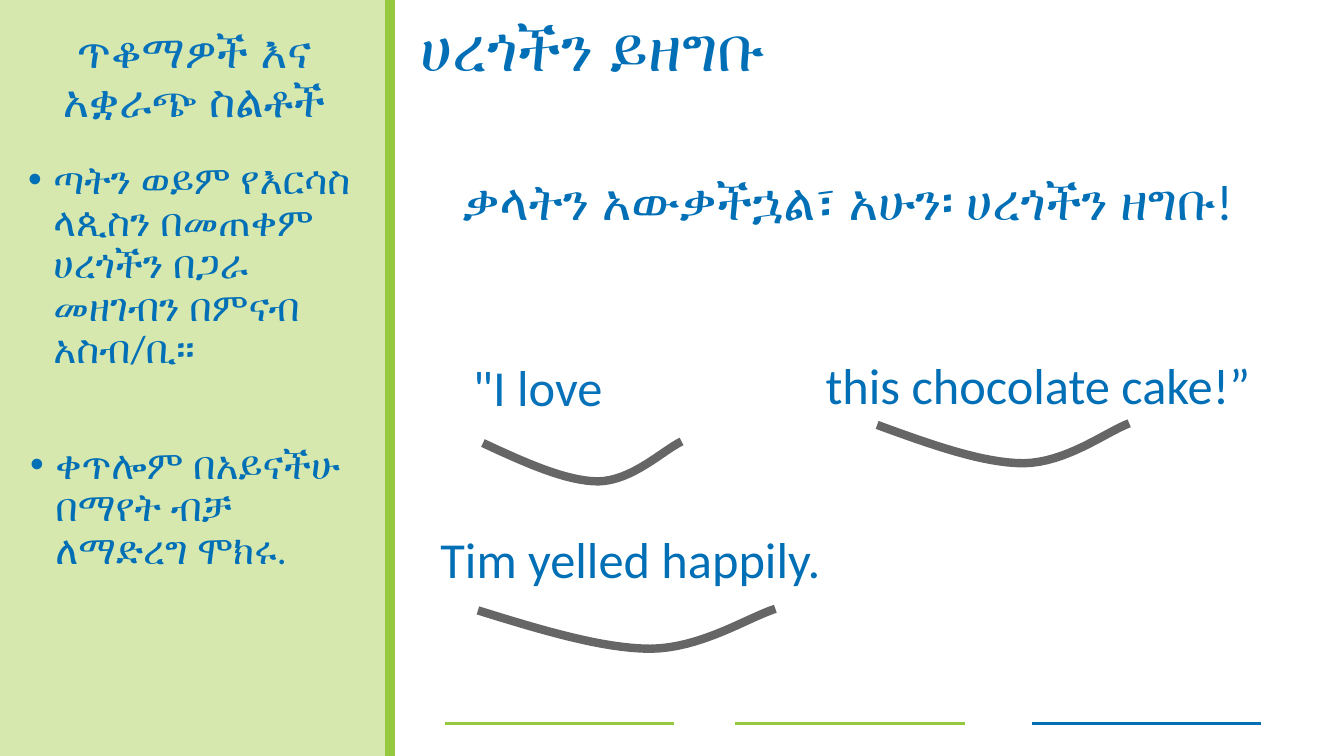
from dataclasses import dataclass

from pptx import Presentation
from pptx.dml.color import RGBColor
from pptx.enum.shapes import MSO_CONNECTOR, MSO_SHAPE
from pptx.enum.text import MSO_ANCHOR, MSO_AUTO_SIZE, PP_ALIGN
from pptx.oxml.ns import qn
from pptx.util import Emu, Pt
from lxml import etree

PX = 9144  # EMU per px, 100 px to the inch
COMPARISON_LAYOUT = 4
FONT = "Calibri"
LEFT, CENTER = PP_ALIGN.LEFT, PP_ALIGN.CENTER
TOP = MSO_ANCHOR.TOP
NO_AUTOFIT = MSO_AUTO_SIZE.NONE
STRAIGHT = MSO_CONNECTOR.STRAIGHT
RECTANGLE = MSO_SHAPE.RECTANGLE

BLUE = RGBColor(0x00, 0x6F, 0xB6)
BRIGHT_BLUE = RGBColor(0x07, 0x71, 0xBA)
GREEN = RGBColor(0x96, 0xC9, 0x3F)
PALE_GREEN = RGBColor(0xD7, 0xE8, 0xAF)
GRAY = RGBColor(0x66, 0x66, 0x66)

# Scoop outline as fractions of its box: two joined cubic curves
SCOOP_CURVES = (
    ((0, 0.04), (0.21, 0.52), (0.42, 0.99), (0.58, 0.99)),
    ((0.58, 0.99), (0.75, 0.98), (0.91, 0.21), (1, 0)),
)
SCOOP_HEIGHT = 40
CURVE_STEPS = 16


@dataclass(frozen=True)
class TextBlock:
    text: str
    left: int
    top: int
    width: int
    height: int
    size: int = 36
    color: RGBColor = BLUE
    bold: bool = False
    align: PP_ALIGN = LEFT
    bullet: bool = False
    inset_left: int = 10
    inset_top: int = 5
    placeholder: int | None = None


@dataclass(frozen=True)
class Rule:
    start: tuple[int, int]
    end: tuple[int, int]
    color: RGBColor
    weight: int = 2


@dataclass(frozen=True)
class Scoop:
    left: int
    top: int
    width: int


TEXT_BLOCKS = (
    TextBlock("ሀረጎችን ይዘግቡ", 387, 0, 622, 172, size=44, bold=True,
              inset_left=30, inset_top=18, placeholder=0),
    TextBlock("ጥቆማዎች እና አቋራጭ ስልቶች", 18, 25, 349, 95, size=32,
              color=BRIGHT_BLUE, bold=True, align=CENTER, placeholder=1),
    TextBlock("ጣትን ወይም የእርሳስ ላጲስን በመጠቀም ሀረጎችን በጋራ መዘገብን በምናብ አስብ/ቢ።",
              18, 154, 347, 247, size=28, bullet=True, placeholder=2),
    TextBlock("ቀጥሎም በአይናችሁ በማየት ብቻ ለማድረግ ሞክሩ.",
              20, 437, 347, 247, size=28, bullet=True, placeholder=4),
    TextBlock("ቃላትን አውቃችኋል፣ አሁን፡ ሀረጎችን ዘግቡ!", 449, 171, 825, 98, placeholder=3),
    TextBlock("\"I love", 434, 355, 375, 98, color=BRIGHT_BLUE, inset_left=35),
    TextBlock("this chocolate cake!”", 809, 353, 513, 98),
    TextBlock("Tim yelled happily.", 427, 526, 503, 98),
)
RULES = (
    Rule((387, 0), (387, 750), GREEN, 7),
    Rule((441, 718), (668, 718), GREEN),
    Rule((729, 718), (957, 718), GREEN),
    Rule((1024, 718), (1251, 718), BLUE),
)
SCOOPS = (Scoop(479, 438, 197), Scoop(870, 420, 250), Scoop(474, 604, 295))


def px(length: float) -> Emu:
    return Emu(round(length * PX))


def apply_format(target, values: dict) -> None:
    for name, value in values.items():
        setattr(target, name, value)


def add_bullet(paragraph, color: RGBColor) -> None:
    properties = paragraph._p.get_or_add_pPr()
    apply_indent = {"marL": px(25), "indent": px(-25)}
    for name, value in apply_indent.items():
        properties.set(name, str(value))
    bullet_color = etree.SubElement(properties, qn("a:buClr"))
    etree.SubElement(bullet_color, qn("a:srgbClr"), val=str(color))
    etree.SubElement(properties, qn("a:buChar"), char="•")


def add_text(slide, block: TextBlock) -> None:
    box = tuple(px(n) for n in (block.left, block.top, block.width, block.height))
    if block.placeholder is None:
        shape = slide.shapes.add_textbox(*box)
    else:
        shape = next(item for item in slide.placeholders
                     if item.placeholder_format.idx == block.placeholder)
        apply_format(shape, dict(zip(("left", "top", "width", "height"), box)))
    frame = shape.text_frame
    apply_format(frame, {
        "word_wrap": True, "auto_size": NO_AUTOFIT, "vertical_anchor": TOP,
        "margin_left": px(block.inset_left), "margin_top": px(block.inset_top),
        "margin_right": px(10), "margin_bottom": px(5),
    })
    paragraph = frame.paragraphs[0]
    apply_format(paragraph, {"alignment": block.align, "line_spacing": 0.9,
                             "space_before": Pt(0)})
    if block.bullet:
        add_bullet(paragraph, block.color)
    run = paragraph.add_run()
    run.text = block.text
    apply_format(run.font, {"name": FONT, "size": Pt(block.size), "bold": block.bold})
    run.font.color.rgb = block.color


def add_rule(slide, rule: Rule) -> None:
    ends = (px(n) for n in rule.start + rule.end)
    connector = slide.shapes.add_connector(STRAIGHT, *ends)
    connector.line.color.rgb = rule.color
    connector.line.width = Pt(rule.weight)
    etree.SubElement(connector._element.spPr, qn("a:effectLst"))


def curve_point(controls: tuple, t: float) -> tuple[float, float]:
    weights = ((1 - t) ** 3, 3 * t * (1 - t) ** 2, 3 * t * t * (1 - t), t ** 3)
    x, y = (sum(w * point[axis] for w, point in zip(weights, controls))
            for axis in (0, 1))
    return x, y


def add_scoop(slide, scoop: Scoop) -> None:
    fractions = [SCOOP_CURVES[0][0]] + [
        curve_point(controls, step / CURVE_STEPS)
        for controls in SCOOP_CURVES for step in range(1, CURVE_STEPS + 1)
    ]
    points = [(px(scoop.left + x * scoop.width), px(scoop.top + y * SCOOP_HEIGHT))
              for x, y in fractions]
    builder = slide.shapes.build_freeform(*points[0])
    builder.add_line_segments(points[1:], close=False)
    shape = builder.convert_to_shape()
    shape.shadow.inherit = False
    shape.fill.background()
    shape.line.color.rgb = GRAY
    shape.line.width = Pt(6)


def add_sidebar(slide) -> None:
    sidebar = slide.shapes.add_shape(RECTANGLE, 0, 0, px(387), px(750))
    sidebar.shadow.inherit = False
    sidebar.fill.solid()
    sidebar.fill.fore_color.rgb = PALE_GREEN
    sidebar.line.fill.background()
    # Send behind the placeholders
    slide.shapes._spTree.insert(2, sidebar._element)


def main() -> None:
    presentation = Presentation()
    presentation.slide_width = px(1333)
    presentation.slide_height = px(750)
    slide = presentation.slides.add_slide(presentation.slide_layouts[COMPARISON_LAYOUT])

    # Background panel and rules
    add_sidebar(slide)
    for rule in RULES:
        add_rule(slide, rule)

    # Wording and the scoops under the phrases
    for block in TEXT_BLOCKS:
        add_text(slide, block)
    for scoop in SCOOPS:
        add_scoop(slide, scoop)

    presentation.save("out.pptx")


if __name__ == "__main__":
    main()
